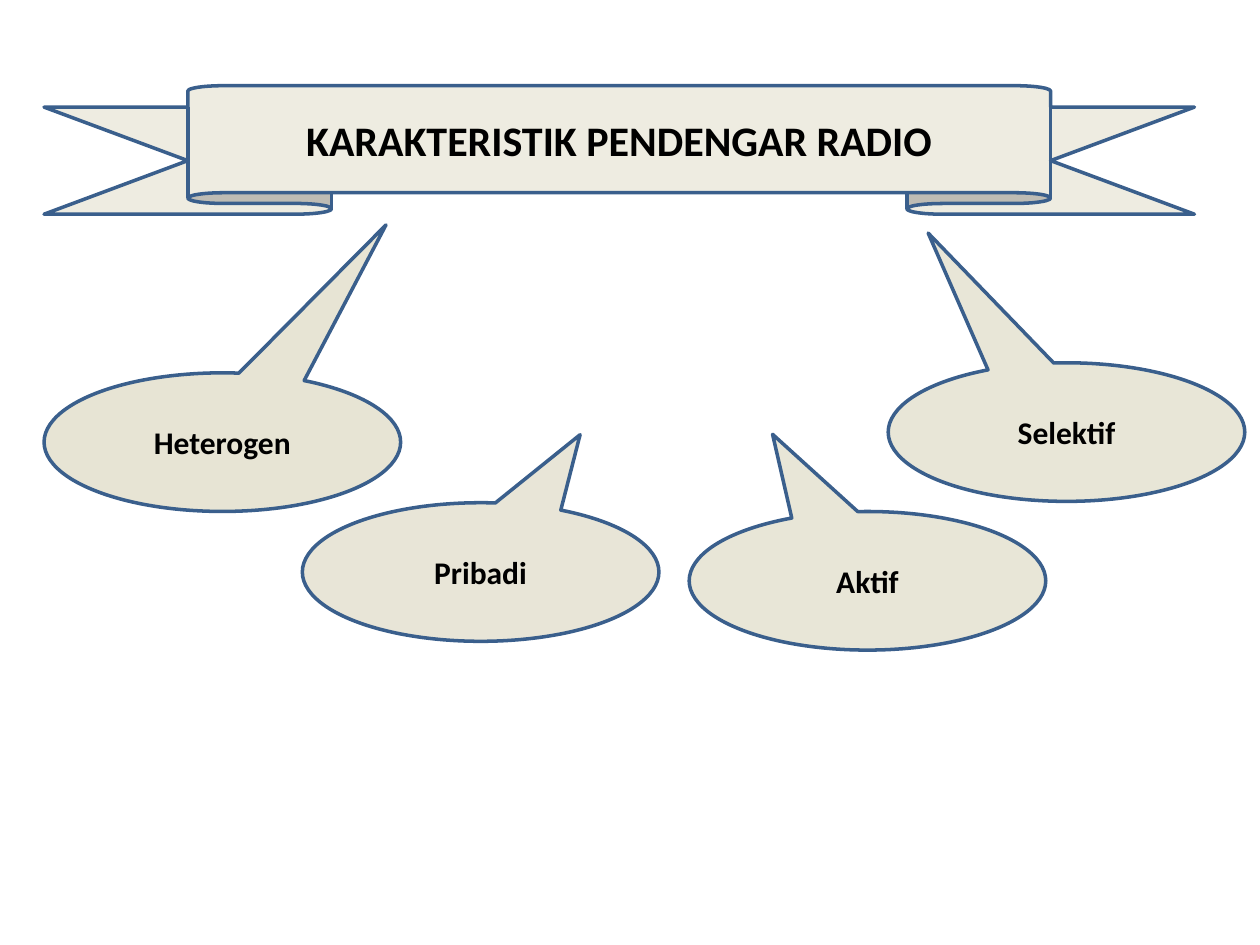
"""Build a slide with a ribbon heading and four callouts on radio listeners."""
from lxml import etree
from pptx import Presentation
from pptx.dml.color import RGBColor
from pptx.enum import shapes, text
from pptx.oxml import ns
from pptx.util import Inches, Pt

HEADING = "KARAKTERISTIK PENDENGAR RADIO"
CALLOUTS = [
    {"label": "Heterogen", "at": (0.35, 2.96), "tip": (0.459, -1.568), "opacity": 70},
    {"label": "Pribadi", "at": (2.4, 3.99), "tip": (0.279, -0.991), "opacity": 66},
    {"label": "Aktif", "at": (5.47, 4.06), "tip": (-0.266, -1.057), "opacity": 65},
    {"label": "Selektif", "at": (7.05, 2.88), "tip": (-0.388, -1.436), "opacity": 65},
]
CALLOUT_SIZE = (2.83, 1.1)
RIBBON_BOX = (0.35, 0.68, 9.13, 1.02)
RIBBON_FOLDS = (0.167, 0.75)

CREAM = RGBColor(0xEE, 0xEC, 0xE1)
TAN = RGBColor(0xDD, 0xD9, 0xC3)
BLUE = RGBColor(0x3A, 0x5F, 0x8C)
BLACK = RGBColor(0, 0, 0)


def add_labelled_shape(slide, kind, box, adjustments, fill, label, size):
    shape = slide.shapes.add_shape(kind, *map(Inches, box))
    for index, value in enumerate(adjustments):
        shape.adjustments[index] = value
    shape.shadow.inherit = False
    shape.fill.solid()
    shape.fill.fore_color.rgb = fill
    shape.line.color.rgb = BLUE
    shape.line.width = Pt(2)
    frame = shape.text_frame
    frame.word_wrap = True
    frame.vertical_anchor = text.MSO_ANCHOR.MIDDLE
    para = frame.paragraphs[0]
    para.text = label
    para.alignment = text.PP_ALIGN.CENTER
    para.font.name = "Calibri"
    para.font.size = Pt(size)
    para.font.bold = True
    para.font.color.rgb = BLACK
    return shape


def set_opacity(shape, percent):
    color = shape._element.spPr.find(ns.qn("a:solidFill"))[0]
    etree.SubElement(color, ns.qn("a:alpha"), val=str(percent * 1000))


def main():
    deck = Presentation()
    deck.slide_width, deck.slide_height = Inches(10), Inches(7.5)
    slide = deck.slides.add_slide(deck.slide_layouts.get_by_name("Blank"))
    add_labelled_shape(slide, shapes.MSO_SHAPE.UP_RIBBON, RIBBON_BOX,
                       RIBBON_FOLDS, CREAM, HEADING, 24)
    for callout in CALLOUTS:
        bubble = add_labelled_shape(slide, shapes.MSO_SHAPE.OVAL_CALLOUT,
                                    callout["at"] + CALLOUT_SIZE, callout["tip"],
                                    TAN, callout["label"], 18)
        set_opacity(bubble, callout["opacity"])
    deck.save("out.pptx")


if __name__ == "__main__":
    main()
